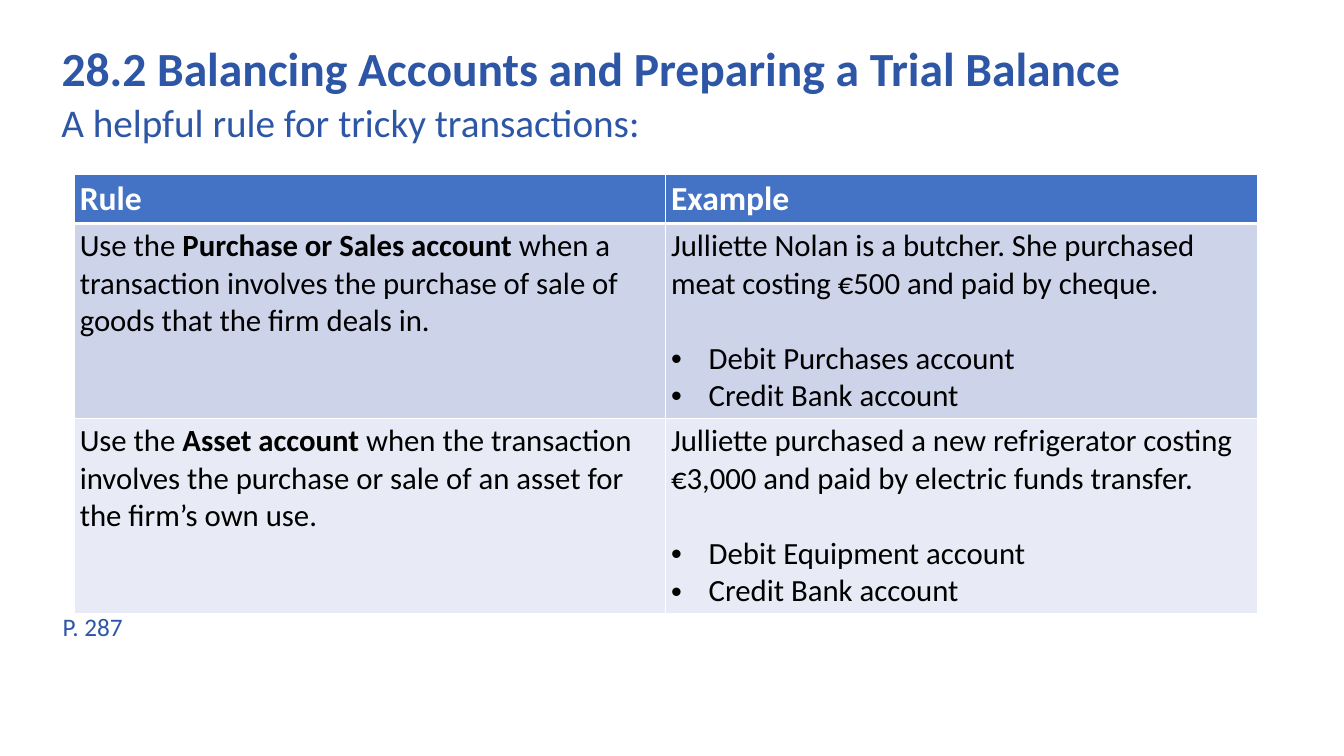
from dataclasses import dataclass

from lxml.etree import SubElement
from pptx import Presentation
from pptx.dml.color import RGBColor
from pptx.enum.text import MSO_ANCHOR, MSO_AUTO_SIZE, PP_ALIGN
from pptx.oxml.ns import qn
from pptx.util import Cm, Pt

FONT = "Calibri"
BLUE = RGBColor(0x2E, 0x56, 0xA6)
HEADER_BLUE = RGBColor(0x44, 0x72, 0xC4)
BAND_DARK = RGBColor(0xCD, 0xD4, 0xEA)
BAND_LIGHT = RGBColor(0xE8, 0xEB, 0xF5)
WHITE = RGBColor(0xFF, 0xFF, 0xFF)
BLACK = RGBColor(0, 0, 0)

INSET = Cm(0.13)
CELL_INSET = Cm(0.1)  # above and below cell text
BULLET_INDENT = Cm(0.95)
COLUMN_WIDTH = Cm(14.9)
HEADER_HEIGHT = Cm(1.24)
ROW_HEIGHT = Cm(4.9)
BODY_SIZE = 22
BULLET_GAP = Pt(26.8)  # one body line between the example and its entries


@dataclass
class Label:
    text: str
    left: float
    top: float
    width: float
    height: float
    size: int
    bold: bool = False


@dataclass
class RuleRow:
    account: str
    condition: str
    example: str
    entries: tuple[str, ...]
    fill: RGBColor


TITLE = Label("28.2 Balancing Accounts and Preparing a Trial Balance",
              1.42, 1.02, 28.96, 1.5, 34, True)
SUBTITLE = Label("A helpful rule for tricky transactions:", 1.42, 2.36, 30.43, 4.9, 28)
PAGE = Label("P. 287", 1.45, 15.27, 16.69, 0.91, 18)

RULES = (
    RuleRow("Purchase or Sales account ",
            "when a transaction involves the purchase of sale of goods that the firm deals in.",
            "Julliette Nolan is a butcher. She purchased meat costing €500 and paid by cheque.",
            ("Debit Purchases account", "Credit Bank account"), BAND_DARK),
    RuleRow("Asset account ",
            "when the transaction involves the purchase or sale of an asset for the firm’s own use.",
            "Julliette purchased a new refrigerator costing €3,000 and paid by electric funds transfer.",
            ("Debit Equipment account", "Credit Bank account"), BAND_LIGHT),
)


def set_font(font, size: int, color: RGBColor, bold: bool = False) -> None:
    font.name = FONT
    font.size = Pt(size)
    font.bold = bold
    font.color.rgb = color


def set_insets(target, vertical: Cm) -> None:
    target.margin_left = target.margin_right = INSET
    target.margin_top = target.margin_bottom = vertical


def fill_label(shape, label: Label):
    """Place and format a text shape; return its paragraph."""
    shape.left, shape.top = Cm(label.left), Cm(label.top)
    shape.width, shape.height = Cm(label.width), Cm(label.height)
    frame = shape.text_frame
    frame.word_wrap = True
    frame.auto_size = MSO_AUTO_SIZE.NONE
    frame.vertical_anchor = MSO_ANCHOR.TOP
    set_insets(frame, INSET)
    paragraph = frame.paragraphs[0]
    paragraph.text = label.text
    paragraph.alignment = PP_ALIGN.LEFT
    set_font(paragraph.font, label.size, BLUE, label.bold)
    return paragraph


def add_label(slide, label: Label) -> None:
    fill_label(slide.shapes.add_textbox(0, 0, 0, 0), label)


def style_cell(cell, fill: RGBColor, top: float, bottom: float) -> None:
    set_insets(cell, CELL_INSET)
    properties = cell._tc.get_or_add_tcPr()
    for side, width in (("L", 1), ("R", 1), ("T", top), ("B", bottom)):
        line = SubElement(properties, qn(f"a:ln{side}"), w=str(Pt(width)))
        SubElement(SubElement(line, qn("a:solidFill")), qn("a:srgbClr"), val=str(WHITE))
    cell.fill.solid()
    cell.fill.fore_color.rgb = fill


def add_bullet(frame, text: str):
    paragraph = frame.add_paragraph()
    properties = paragraph._p.get_or_add_pPr()
    properties.set("marL", str(BULLET_INDENT))
    properties.set("indent", str(-BULLET_INDENT))
    SubElement(properties, qn("a:buFont"), typeface="Arial")
    SubElement(properties, qn("a:buChar"), char="•")
    paragraph.text = text
    set_font(paragraph.font, BODY_SIZE, BLACK)
    return paragraph


def fill_rule(cell, rule: RuleRow) -> None:
    paragraph = cell.text_frame.paragraphs[0]
    for text, bold in (("Use the ", False), (rule.account, True), (rule.condition, False)):
        run = paragraph.add_run()
        run.text = text
        set_font(run.font, BODY_SIZE, BLACK, bold)


def fill_example(cell, rule: RuleRow) -> None:
    frame = cell.text_frame
    frame.text = rule.example
    set_font(frame.paragraphs[0].font, BODY_SIZE, BLACK)
    bullets = [add_bullet(frame, entry) for entry in rule.entries]
    bullets[0].space_before = BULLET_GAP


def add_rules_table(slide) -> None:
    table = slide.shapes.add_table(
        len(RULES) + 1, 2, Cm(1.88), Cm(4.39),
        2 * COLUMN_WIDTH, HEADER_HEIGHT + len(RULES) * ROW_HEIGHT).table
    table.first_row = table.horz_banding = False
    for column in table.columns:
        column.width = COLUMN_WIDTH

    # Header row
    table.rows[0].height = HEADER_HEIGHT
    for cell, heading in zip(table.rows[0].cells, ("Rule", "Example")):
        cell.text = heading
        set_font(cell.text_frame.paragraphs[0].font, 24, WHITE, True)
        style_cell(cell, HEADER_BLUE, 1, 3)

    # Rule rows
    for index, rule in enumerate(RULES, start=1):
        row = table.rows[index]
        row.height = ROW_HEIGHT
        fill_rule(row.cells[0], rule)
        fill_example(row.cells[1], rule)
        for cell in row.cells:
            style_cell(cell, rule.fill, 3 if index == 1 else 1, 1)


def main() -> None:
    presentation = Presentation()
    presentation.slide_width, presentation.slide_height = Cm(33.87), Cm(19.05)
    slide = presentation.slides.add_slide(presentation.slide_layouts.get_by_name("Title Only"))

    fill_label(slide.shapes.title, TITLE).line_spacing = 0.9
    add_label(slide, SUBTITLE)
    add_label(slide, PAGE)
    add_rules_table(slide)

    presentation.save("out.pptx")


if __name__ == "__main__":
    main()
